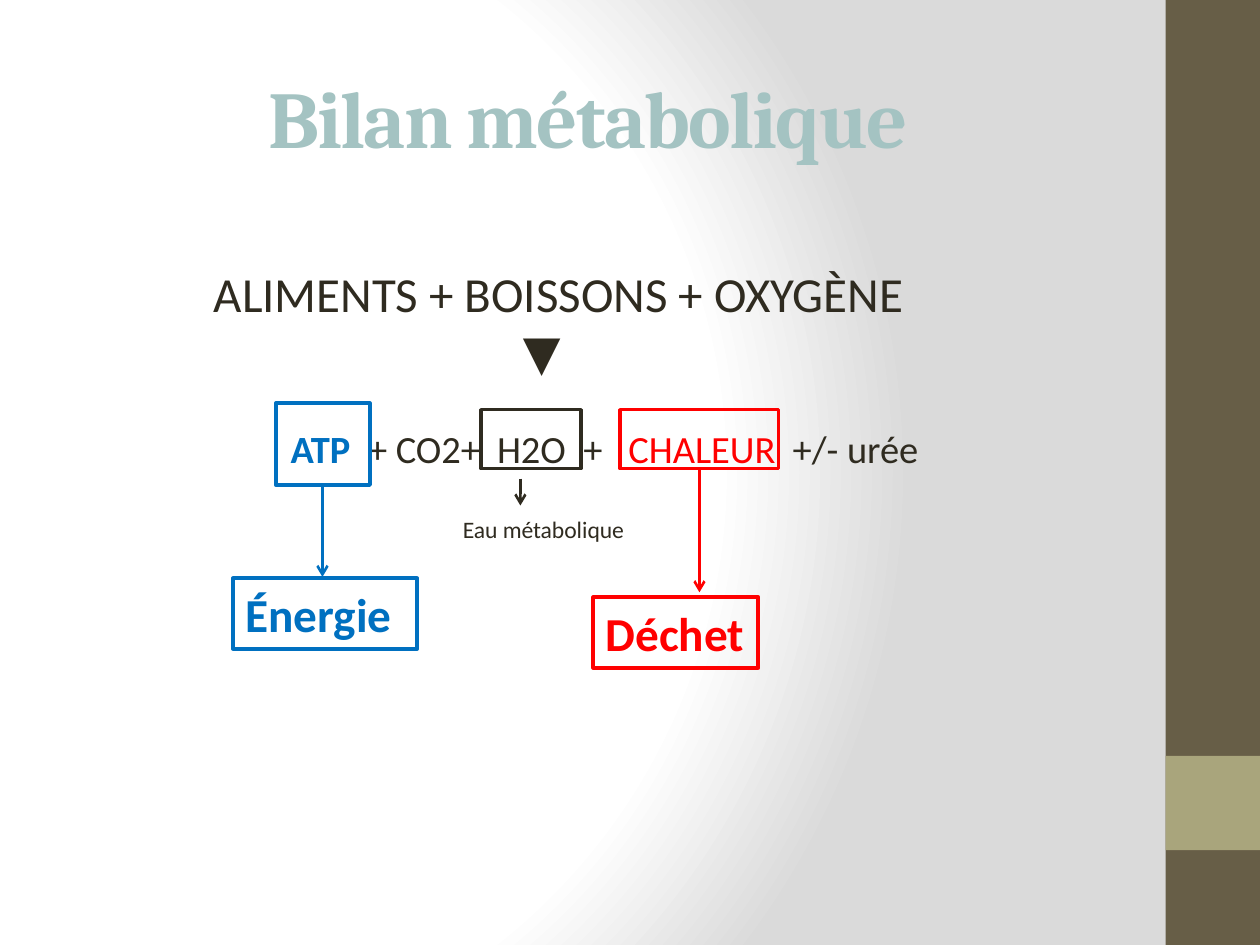
from lxml import etree
from pptx import Presentation
from pptx.dml.color import RGBColor
from pptx.enum.shapes import MSO_CONNECTOR, MSO_SHAPE
from pptx.enum.text import MSO_ANCHOR, PP_ALIGN
from pptx.oxml import parse_xml
from pptx.oxml.ns import nsdecls, qn
from pptx.util import Cm, Pt

RECT = MSO_SHAPE.RECTANGLE
LINE = MSO_CONNECTOR.STRAIGHT
LEFT, MID = PP_ALIGN.LEFT, PP_ALIGN.CENTER
TOP, CENTER = MSO_ANCHOR.TOP, MSO_ANCHOR.MIDDLE

BROWN = RGBColor(0x67, 0x5E, 0x47)
OLIVE = RGBColor(0xA9, 0xA5, 0x7C)
TEAL = RGBColor(0xA4, 0xC3, 0xC2)
DARK = RGBColor(0x2F, 0x2B, 0x20)
BLUE = RGBColor(0x00, 0x70, 0xC0)
RED = RGBColor(0xFF, 0x00, 0x00)

GRAD = f"""<a:gradFill {nsdecls("a")} rotWithShape="1"><a:gsLst>
<a:gs pos="0"><a:srgbClr val="FFFFFF"/></a:gs>
<a:gs pos="75000"><a:srgbClr val="FFFFFF"/></a:gs>
<a:gs pos="100000"><a:srgbClr val="DADADA"/></a:gs></a:gsLst>
<a:path path="circle"><a:fillToRect l="20000" t="50000" r="100000" b="50000"/></a:path>
</a:gradFill>"""


def write(para, text, size=22, font="Calibri", color=DARK, bold=False, track=0):
    run = para.add_run()
    run.text = text
    run.font.size = Pt(size)
    run.font.name = font
    run.font.color.rgb = color
    run.font.bold = bold
    if track:
        run.font._element.set("spc", str(track))


class Board:
    def __init__(self, slide, font="Calibri"):
        self.slide = slide
        self.font = font

    def ground(self):
        self.slide.background.fill.gradient()
        old = self.slide.element.find(".//" + qn("a:gradFill"))
        old.getparent().replace(old, parse_xml(GRAD))

    def block(self, x, y, w, h, fill=None, line=None, width=2):
        shape = self.slide.shapes.add_shape(RECT, Cm(x), Cm(y), Cm(w), Cm(h))
        shape.shadow.inherit = False
        if fill is None:
            shape.fill.background()
        else:
            shape.fill.solid()
            shape.fill.fore_color.rgb = fill
        if line is None:
            shape.line.fill.background()
        else:
            shape.line.color.rgb = line
            shape.line.width = Pt(width)
        return shape

    def label(self, x, y, w, h, text, color):
        frame = self.block(x, y, w, h, line=color, width=2.25).text_frame
        frame.word_wrap = True
        frame.margin_right = 0
        para = frame.paragraphs[0]
        para.alignment = LEFT
        write(para, text, size=27, font=self.font, color=color, bold=True)

    def frame(self, x, y, w, h, anchor=TOP):
        frame = self.slide.shapes.add_textbox(Cm(x), Cm(y), Cm(w), Cm(h)).text_frame
        frame.word_wrap = True
        frame.vertical_anchor = anchor
        return frame

    def title(self, x, y, w, h, text, **style):
        para = self.frame(x, y, w, h, CENTER).paragraphs[0]
        para.alignment = MID
        write(para, text, **style)

    def row(self, para, stops, height, before=0):
        para.line_spacing = Pt(height)
        para.space_before = Pt(before)
        tabs = etree.SubElement(para._p.get_or_add_pPr(), qn("a:tabLst"))
        for stop in stops:
            etree.SubElement(tabs, qn("a:tab"), pos=str(Cm(stop)), algn="l")

    def arrow(self, x, start, end, color):
        line = self.slide.shapes.add_connector(LINE, Cm(x), Cm(start), Cm(x), Cm(end))
        line.line.color.rgb = color
        line.line.width = Pt(1.5)
        etree.SubElement(line.line._get_or_add_ln(), qn("a:tailEnd"), type="arrow")
        etree.SubElement(line._element.spPr, qn("a:effectLst"))


def main():
    deck = Presentation()
    deck.slide_width, deck.slide_height = Cm(25.4), Cm(19.05)
    board = Board(deck.slides.add_slide(deck.slide_layouts[6]))
    board.ground()
    board.block(23.5, 0, 1.9, 19.05, fill=BROWN)
    board.block(23.5, 15.24, 1.9, 1.9, fill=OLIVE)
    board.title(1.27, 0.76, 21.16, 3.18, "Bilan métabolique",
                size=46, font="Cambria", color=TEAL, bold=True, track=-100)

    body = board.frame(1.27, 5.17, 21.16, 13.3)
    intake = body.paragraphs[0]
    board.row(intake, [2.79], 34)
    write(intake, "\tALIMENTS + BOISSONS + OXYGÈNE", size=28)
    mark = body.add_paragraph()
    board.row(mark, [9.02], 33)
    write(mark, "\t▼", size=28, font="Quicksand")
    yield_row = body.add_paragraph()
    board.row(yield_row, [4.34, 5.9, 8.5, 10.24, 11.15, 14.46], 27, before=25)
    write(yield_row, "\tATP", color=BLUE, bold=True)
    write(yield_row, "\t+ CO2+\tH2O\t+")
    write(yield_row, "\tCHALEUR", color=RED)
    write(yield_row, "\t+/- urée")

    board.block(5.56, 8.13, 1.9, 1.65, line=BLUE)
    board.block(12.5, 8.26, 3.2, 1.19, line=RED)
    board.block(9.7, 8.26, 2.01, 1.19, line=DARK)
    board.label(4.7, 11.66, 3.71, 1.42, "Énergie", BLUE)
    board.label(11.96, 12.04, 3.33, 1.42, "Déchet", RED)
    board.title(8.76, 10.24, 4.39, 0.84, "Eau métabolique", size=13.5)
    board.arrow(6.5, 9.78, 11.63, BLUE)
    board.arrow(14.1, 9.45, 11.94, RED)
    board.arrow(10.49, 9.65, 10.19, DARK)
    deck.save("out.pptx")


if __name__ == "__main__":
    main()
